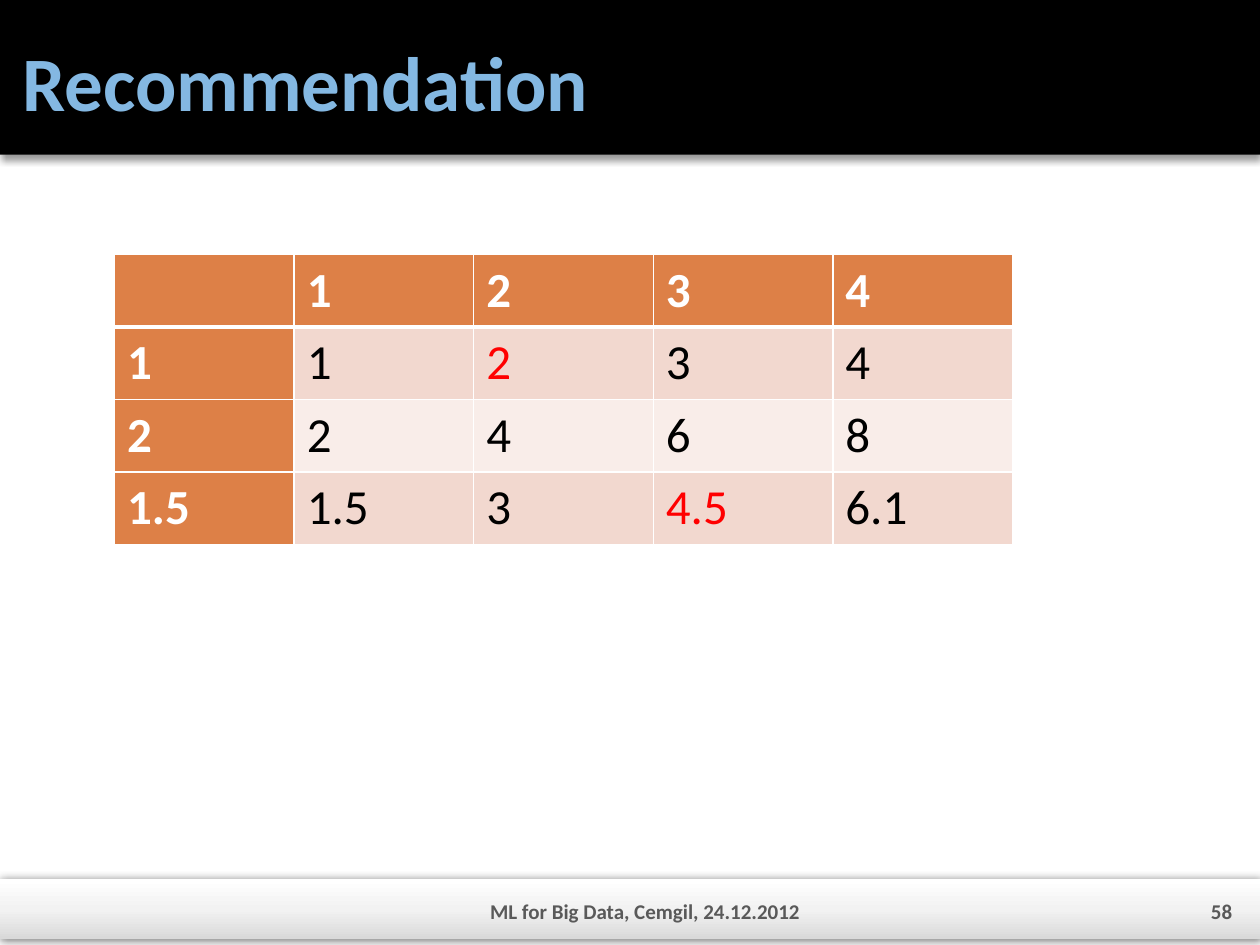
from dataclasses import dataclass

from lxml.etree import SubElement
from pptx import Presentation
from pptx.dml.color import RGBColor
from pptx.enum.shapes import MSO_SHAPE
from pptx.enum.text import MSO_ANCHOR, PP_ALIGN
from pptx.oxml.ns import qn
from pptx.util import Cm, Pt

FONT = "Calibri"
ACCENT, WHITE, BLACK, RED, GREY = "DD8047", "FFFFFF", "000000", "FF0000", "595959"
STRIPES = ("F9EDE9", "F2D8CF")
ROWS = (
    ("", "1", "2", "3", "4"),
    ("1", "1", "2", "3", "4"),
    ("2", "2", "4", "6", "8"),
    ("1.5", "1.5", "3", "4.5", "6.1"),
)
PREDICTED = {(1, 2), (3, 3)}


@dataclass
class Band:
    """A full-width bar whose fill runs through one or more colours."""
    top: float
    height: float
    colors: tuple
    opacity: int
    blur: float
    drop: float


@dataclass
class FooterItem:
    """A piece of footer text."""
    text: str
    left: float
    width: float
    inset: float
    align: PP_ALIGN


BANDS = (
    Band(0, 3.12, (BLACK,), 40, 4, 3),
    Band(17.73, 1.2, ("D9D9D9", "F2F2F2", WHITE), 50, 5, 0),
)
FOOTER = (
    FooterItem("ML for Big Data, Cemgil, 24.12.2012", 3.1, 19.81, 0.13, PP_ALIGN.CENTER),
    FooterItem("58", 23.06, 2.03, 0.25, PP_ALIGN.RIGHT),
)


def rgb(color: str) -> RGBColor:
    """Turn a hex string into a colour."""
    return RGBColor.from_string(color)


def put_text(tf, text: str, *, size: float, color: str, bold: bool = False,
             align: PP_ALIGN = PP_ALIGN.LEFT) -> None:
    """Write one formatted paragraph into a text frame."""
    p = tf.paragraphs[0]
    p.alignment = align
    r = p.add_run()
    r.text = text
    r.font.name, r.font.size, r.font.bold = FONT, Pt(size), bold
    r.font.color.rgb = rgb(color)


def set_box(tf, left: float, top: float, right: float, bottom: float) -> None:
    """Set wrapping, middle anchoring and insets of a text frame."""
    tf.word_wrap = True
    tf.vertical_anchor = MSO_ANCHOR.MIDDLE
    tf.margin_left, tf.margin_top = Cm(left), Cm(top)
    tf.margin_right, tf.margin_bottom = Cm(right), Cm(bottom)


def add_color(parent, color: str):
    """Append a colour element to an XML parent."""
    return SubElement(parent, qn("a:srgbClr"), val=color)


def add_band(s, band: Band, width: int) -> None:
    """Draw a shadowed bar behind the title."""
    sp = s.shapes.add_shape(MSO_SHAPE.RECTANGLE, 0, Cm(band.top), width, Cm(band.height))
    sp.line.fill.background()
    if len(band.colors) == 1:
        sp.fill.solid()
        sp.fill.fore_color.rgb = rgb(band.colors[0])
    else:
        sp.fill.gradient()
        sp.fill.gradient_angle = 90
        stops = sp._element.spPr.find(".//" + qn("a:gsLst"))
        stops.clear()
        for i, color in enumerate(band.colors):
            pos = 100000 * i // (len(band.colors) - 1)
            add_color(SubElement(stops, qn("a:gs"), pos=str(pos)), color)
    sp.shadow.inherit = False
    effects = sp._element.spPr.find(qn("a:effectLst"))
    shadow = SubElement(effects, qn("a:outerShdw"), blurRad=str(Pt(band.blur)),
                        dist=str(Pt(band.drop)), dir="5400000", rotWithShape="0")
    SubElement(add_color(shadow, BLACK), qn("a:alpha"), val=str(band.opacity * 1000))
    s.shapes._spTree.remove(sp._element)
    s.shapes._spTree.insert(2, sp._element)


def set_borders(cell, **widths: float) -> None:
    """Give a cell white borders, keyed by side."""
    tcPr = cell._tc.get_or_add_tcPr()
    for i, (side, width) in enumerate(widths.items()):
        ln = SubElement(tcPr, qn(f"a:ln{side}"), w=str(Pt(width)))
        add_color(SubElement(ln, qn("a:solidFill")), WHITE)
        tcPr.insert(i, ln)


def add_ratings(s) -> None:
    """Add the table of known and predicted ratings."""
    frame = s.shapes.add_table(len(ROWS), len(ROWS[0]), Cm(2.31), Cm(5.13), Cm(18.1), Cm(5.84))
    for i, row in enumerate(ROWS):
        for j, text in enumerate(row):
            cell = frame.table.cell(i, j)
            head = i == 0 or j == 0
            cell.fill.solid()
            cell.fill.fore_color.rgb = rgb(ACCENT if head else STRIPES[i % 2])
            set_borders(cell, L=1, R=1, T=3 if i == 1 else 1, B=3 if i == 0 else 1)
            if text:
                color = WHITE if head else RED if (i, j) in PREDICTED else BLACK
                put_text(cell.text_frame, text, size=28, color=color, bold=head)


def add_footer(s, item: FooterItem) -> None:
    """Add one footer text box."""
    tf = s.shapes.add_textbox(Cm(item.left), Cm(17.93), Cm(item.width), Cm(0.76)).text_frame
    set_box(tf, item.inset, 0.13, item.inset, 0)
    put_text(tf, item.text, size=12, color=GREY, bold=True, align=item.align)


def main() -> None:
    """Build and save the slide."""
    prs = Presentation()
    prs.slide_width, prs.slide_height = Cm(25.4), Cm(19.05)
    s = prs.slides.add_slide(prs.slide_layouts[5])
    title = s.shapes.title
    title.left, title.top, title.width, title.height = Cm(0.2), Cm(0.33), Cm(24.89), Cm(2.59)
    set_box(title.text_frame, 0.25, 0.13, 0.13, 0.13)
    put_text(title.text_frame, "Recommendation", size=44, color="84B8E2", bold=True)
    for band in BANDS:
        add_band(s, band, prs.slide_width)
    add_ratings(s)
    for item in FOOTER:
        add_footer(s, item)
    prs.save("out.pptx")


if __name__ == "__main__":
    main()
